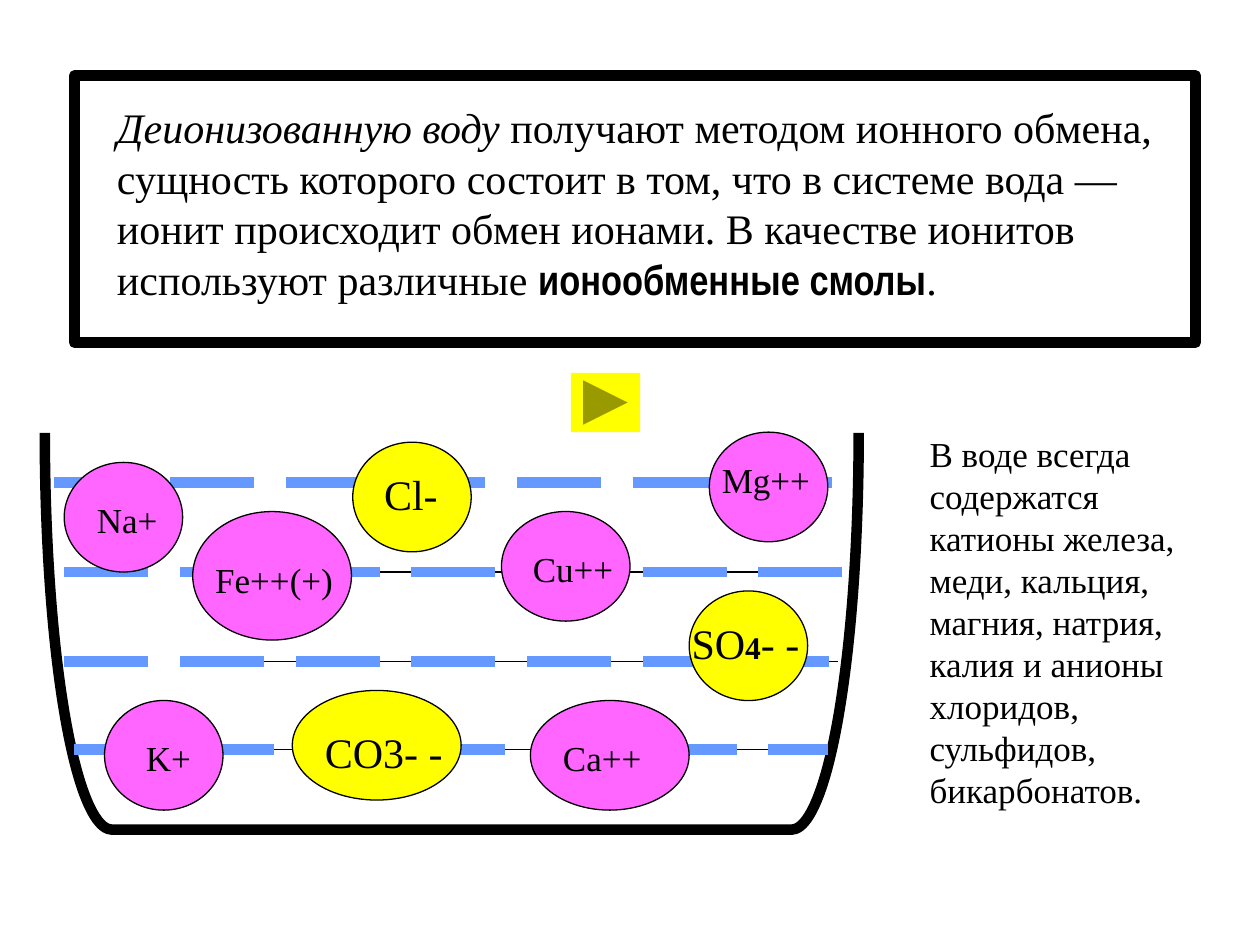
"""Build a slide on deionized water with a vessel of dissolved ions."""
from dataclasses import dataclass
from typing import NamedTuple

from lxml import etree
from pptx import Presentation
from pptx.dml.color import RGBColor
from pptx.enum.dml import MSO_LINE
from pptx.enum.shapes import MSO_CONNECTOR, MSO_SHAPE
from pptx.enum.text import MSO_AUTO_SIZE
from pptx.oxml.ns import qn
from pptx.shapes.autoshape import Shape
from pptx.slide import Slide
from pptx.util import Inches, Pt

OVAL = MSO_SHAPE.OVAL
RECT = MSO_SHAPE.RECTANGLE
BRACKET = MSO_SHAPE.RIGHT_BRACKET
NEXT = MSO_SHAPE.ACTION_BUTTON_FORWARD_OR_NEXT
STRAIGHT = MSO_CONNECTOR.STRAIGHT
DASH = MSO_LINE.LONG_DASH
GROW = MSO_AUTO_SIZE.SHAPE_TO_FIT_TEXT


@dataclass(frozen=True)
class Theme:
    ink: str = "000000"
    water: str = "6699FF"
    cation: str = "FF66FF"
    anion: str = "FFFF00"
    serif: str = "Times New Roman"
    narrow: str = "Arial Narrow"
    large: int = 24
    body: int = 20
    small: int = 18
    thick: float = 6
    thin: float = 0.75


THEME = Theme()


class Box(NamedTuple):
    left: float
    top: float
    width: float
    height: float


class Word(NamedTuple):
    text: str
    size: int = THEME.body
    font: str = THEME.serif
    bold: bool = False
    slant: bool = False


class Ion(NamedTuple):
    oval: Box
    label: Box
    words: list[Word]
    fill: str = THEME.cation


class Level(NamedTuple):
    left: float
    right: float
    y: float
    color: str = THEME.water
    weight: float = THEME.thick


LEVELS = [
    Level(1.46, 6.65, 4.54, THEME.ink, THEME.thin),
    Level(1.61, 6.57, 5.95, THEME.ink, THEME.thin),
    Level(1.53, 6.65, 5.25, THEME.ink, THEME.thin),
    Level(0.59, 6.57, 5.95),
    Level(0.51, 6.89, 4.54),
    Level(0.51, 6.58, 5.25),
    Level(0.43, 6.81, 3.83),
]

IONS = [
    Ion(Box(1.53, 4.06, 1.26, 1.02), Box(1.61, 4.38, 1.26, 0.43), [Word("Fe++(+)")]),
    Ion(Box(3.98, 4.06, 1.02, 0.87), Box(4.13, 4.3, 1.02, 0.43), [Word("Cu++")]),
    Ion(Box(0.83, 5.56, 0.94, 0.87), Box(1.06, 5.8, 0.79, 0.43), [Word("K+")]),
    Ion(Box(4.21, 5.56, 1.26, 0.87), Box(4.37, 5.8, 0.86, 0.43), [Word("Ca++")]),
    Ion(Box(5.63, 3.43, 0.94, 0.87), Box(5.63, 3.59, 1.02, 0.43), [Word("Mg++")]),
    Ion(Box(0.51, 3.67, 0.94, 0.87), Box(0.67, 3.91, 0.87, 0.43), [Word("Na+")]),
    Ion(Box(2.32, 5.48, 1.34, 0.87), Box(2.48, 5.72, 1.18, 0.5),
        [Word("CO3- -", THEME.large)], THEME.anion),
    Ion(Box(5.47, 4.69, 0.94, 0.87), Box(5.39, 4.85, 1.34, 0.5),
        [Word("SO", THEME.large), Word("4", THEME.small, bold=True),
         Word("- -", THEME.large)], THEME.anion),
    Ion(Box(2.8, 3.51, 0.94, 0.87), Box(2.95, 3.67, 0.86, 0.5),
        [Word("Cl-", THEME.large)], THEME.anion),
]

INTRO = [
    Word("Деионизованную воду", THEME.large, slant=True),
    Word(" получают методом ионного обмена, сущность которого состоит в том, "
         "что в системе вода — ионит происходит обмен ионами. "
         "В качестве ионитов используют различные ", THEME.large),
    Word("ионообменные смолы", THEME.large, THEME.narrow, bold=True),
    Word(".", THEME.large),
]

NOTE = [Word("В воде всегда содержатся катионы железа, меди, кальция, магния, "
             "натрия, калия и анионы хлоридов, сульфидов, бикарбонатов.")]


def paint(name: str) -> RGBColor:
    return RGBColor.from_string(name)


def place(box: Box) -> list[int]:
    return [Inches(side) for side in box]


def add_form(slide: Slide, kind: MSO_SHAPE, box: Box,
             fill: str | None = None, weight: float = 0) -> Shape:
    form = slide.shapes.add_shape(kind, *place(box))
    form.shadow.inherit = False
    if fill:
        form.fill.solid()
        form.fill.fore_color.rgb = paint(fill)
    else:
        form.fill.background()
    if weight:
        form.line.color.rgb = paint(THEME.ink)
        form.line.width = Pt(weight)
    else:
        form.line.fill.background()
    return form


def add_text(slide: Slide, box: Box, words: list[Word]) -> None:
    frame = slide.shapes.add_textbox(*place(box)).text_frame
    frame.word_wrap = True
    frame.auto_size = GROW
    for word in words:
        run = frame.paragraphs[0].add_run()
        run.text = word.text
        font = run.font
        font.size = Pt(word.size)
        font.name = word.font
        font.bold = word.bold
        font.italic = word.slant
        font.color.rgb = paint(THEME.ink)


def add_level(slide: Slide, level: Level) -> None:
    y = Inches(level.y)
    wire = slide.shapes.add_connector(
        STRAIGHT, Inches(level.left), y, Inches(level.right), y)
    wire.line.color.rgb = paint(level.color)
    wire.line.width = Pt(level.weight)
    if level.color == THEME.water:
        wire.line.dash_style = DASH
    etree.SubElement(wire._element.spPr, qn("a:effectLst"))


def add_ion(slide: Slide, ion: Ion) -> None:
    add_form(slide, OVAL, ion.oval, ion.fill, THEME.thin)
    add_text(slide, ion.label, ion.words)


def main() -> None:
    deck = Presentation()
    deck.slide_width, deck.slide_height = Inches(10), Inches(7.5)
    slide = deck.slides.add_slide(deck.slide_layouts[6])
    add_text(slide, Box(0.83, 0.76, 8.82, 1.7), INTRO)
    vessel = add_form(slide, BRACKET, Box(2.01, 1.78, 3.15, 6.46), weight=THEME.thick)
    vessel.adjustments[0] = 0.17
    vessel.rotation = 90
    for level in LEVELS:
        add_level(slide, level)
    for ion in IONS:
        add_ion(slide, ion)
    add_text(slide, Box(7.28, 3.38, 2.36, 3.6), NOTE)
    add_form(slide, RECT, Box(0.59, 0.6, 8.9, 2.12), weight=THEME.thick)
    add_form(slide, NEXT, Box(4.53, 2.96, 0.55, 0.47), THEME.anion)
    deck.save("out.pptx")


if __name__ == "__main__":
    main()
